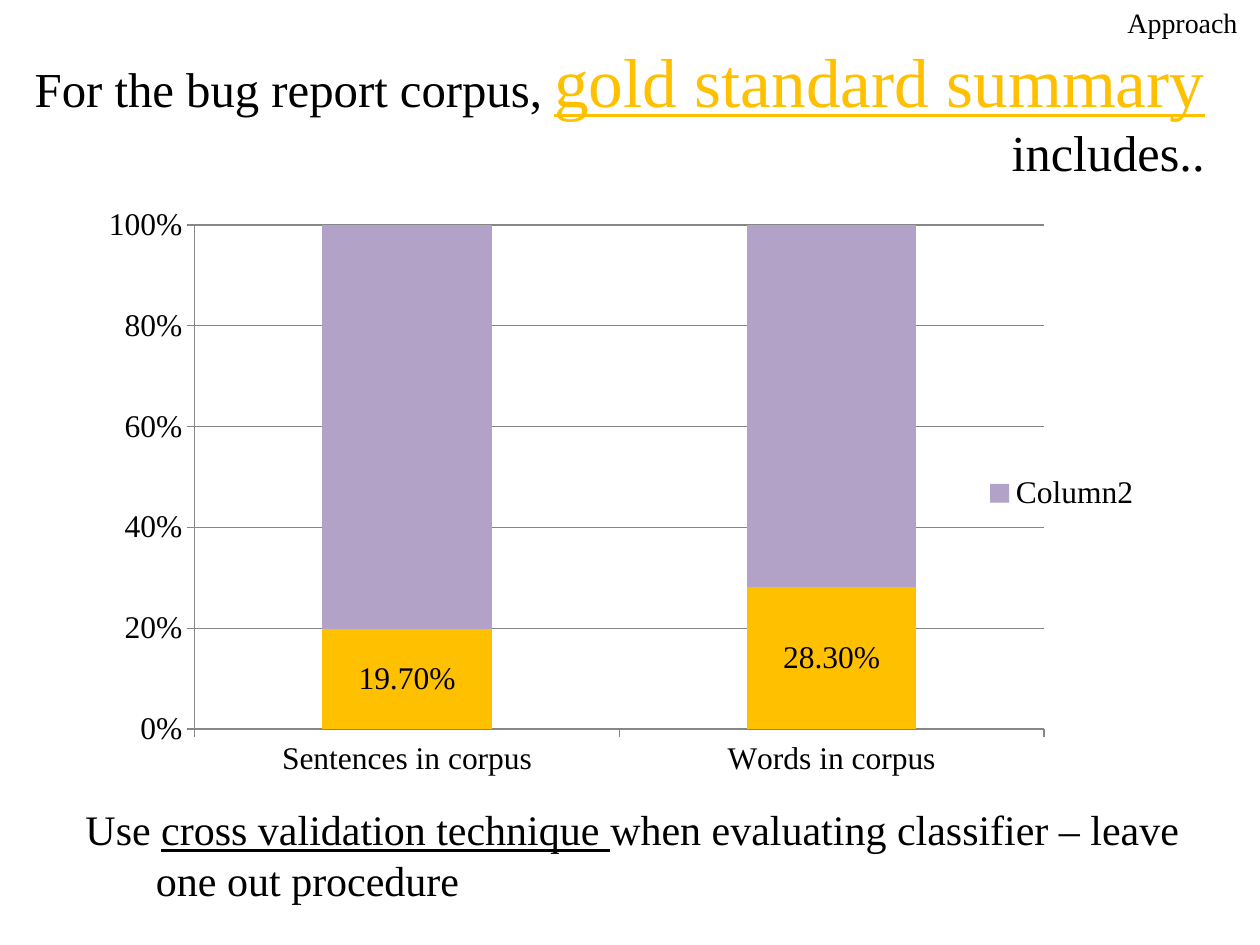
from lxml import etree
from pptx import Presentation
from pptx.chart.data import CategoryChartData as Data
from pptx.dml.color import RGBColor as Rgb
from pptx.enum.chart import XL_CHART_TYPE as Kind, XL_LABEL_POSITION as Spot
from pptx.enum.chart import XL_LEGEND_POSITION as Side, XL_TICK_MARK as Tick
from pptx.enum.text import MSO_ANCHOR as Anchor, PP_ALIGN as Align
from pptx.oxml.ns import qn
from pptx.util import Inches, Pt

FONT = "Times New Roman"
HEX = {"ink": "000000", "gold": "FFC000", "lilac": "B3A2C7", "grid": "868686"}


def color(name):
    return Rgb.from_string(HEX[name])


def write(para, text, size=24, ink="ink", under=False):
    run = para.add_run()
    run.text = text
    font = run.font
    font.name, font.size, font.underline = FONT, Pt(size), under
    font.color.rgb = color(ink)


class Deck:
    """Holds the presentation, its style and the current slide."""

    def __init__(self, wide, high):
        self.show = Presentation()
        self.show.slide_width, self.show.slide_height = Inches(wide), Inches(high)
        self.slide = self.show.slides.add_slide(self.show.slide_layouts[6])

    def text(self, box, runs, align=Align.LEFT, anchor=Anchor.MIDDLE, hang=0, before=0):
        frame = self.slide.shapes.add_textbox(*map(Inches, box)).text_frame
        frame.word_wrap = True
        frame.vertical_anchor = anchor
        para = frame.paragraphs[0]
        para.alignment = align
        para.space_before = Pt(before)
        if hang:
            props = para._p.get_or_add_pPr()
            props.set("marL", str(Inches(hang)))
            props.set("indent", str(-Inches(hang)))
        for words, style in runs:
            write(para, words, **style)

    def chart(self, box, cats, rows, area):
        data = Data(number_format="0.00%")
        data.categories = cats
        for name, vals, _ in rows:
            data.add_series(name, vals)
        kind = Kind.COLUMN_STACKED_100
        chart = self.slide.shapes.add_chart(kind, *map(Inches, box), data).chart
        chart.has_title = False
        chart.font.name, chart.font.size = FONT, Pt(18)
        chart.font.color.rgb = color("ink")
        plot = chart.plots[0]
        plot.vary_by_categories = False
        plot.overlap, plot.gap_width = 100, 150
        for bars, (_, _, fill) in zip(plot.series, rows):
            bars.format.fill.solid()
            bars.format.fill.fore_color.rgb = color(fill)
        self.label(plot.series[0])
        self.axes(chart)
        self.legend(chart)
        self.place(chart, area)

    def label(self, bars):
        labels = bars.data_labels
        labels.show_value = True
        labels.number_format, labels.number_format_is_linked = "0.00%", False
        labels.position = Spot.CENTER

    def axes(self, chart):
        axis = chart.value_axis
        axis.minimum_scale, axis.maximum_scale, axis.major_unit = 0, 1, 0.2
        axis.has_major_gridlines = True
        axis.tick_labels.number_format = "0%"
        axis.tick_labels.number_format_is_linked = False
        lines = [axis.major_gridlines.format.line]
        for item in (axis, chart.category_axis):
            item.major_tick_mark = Tick.OUTSIDE
            lines.append(item.format.line)
        for line in lines:
            line.color.rgb, line.width = color("grid"), Pt(0.75)

    def legend(self, chart):
        chart.has_legend = True
        legend = chart.legend
        legend.position, legend.include_in_layout = Side.RIGHT, False
        entry = etree.Element(qn("c:legendEntry"))
        etree.SubElement(entry, qn("c:idx"), val="0")
        etree.SubElement(entry, qn("c:delete"), val="1")
        legend._element.find(qn("c:legendPos")).addnext(entry)

    def place(self, chart, area):
        plot = chart._chartSpace.find(".//" + qn("c:plotArea"))
        old = plot.find(qn("c:layout"))
        if old is not None:
            plot.remove(old)
        layout = etree.Element(qn("c:layout"))
        manual = etree.SubElement(layout, qn("c:manualLayout"))
        parts = [("layoutTarget", "inner"), ("xMode", "edge"), ("yMode", "edge")]
        for tag, val in parts + list(zip("xywh", area)):
            etree.SubElement(manual, qn("c:" + tag), val=str(val))
        plot.insert(0, layout)


def main():
    deck = Deck(10, 7.5)
    deck.text((-0.42, 0.25, 10.08, 1.25), [
        ("For the bug report corpus, ", {"size": 27.9}),
        ("gold standard summary ", {"size": 39.6, "ink": "gold", "under": True}),
        ("includes..", {"size": 28.8}),
    ], align=Align.RIGHT)
    deck.text((0.58, 6.33, 9, 1), [
        ("Use ", {}),
        ("cross validation technique ", {"under": True}),
        ("when evaluating classifier – leave one out procedure", {}),
    ], anchor=Anchor.TOP, hang=0.56, before=4.8)
    deck.chart((0.83, 1.58, 8.33, 4.67), ["Sentences in corpus", "Words in corpus"], [
        ("Series 1", (0.197, 0.283), "gold"),
        ("Column2", (0.8, 0.72), "lilac"),
    ], (0.086, 0.044, 0.809, 0.857))
    deck.text((7.75, 0.04, 2.17, 0.28), [("Approach", {"size": 16})], align=Align.RIGHT)
    deck.show.save("out.pptx")


if __name__ == "__main__":
    main()
